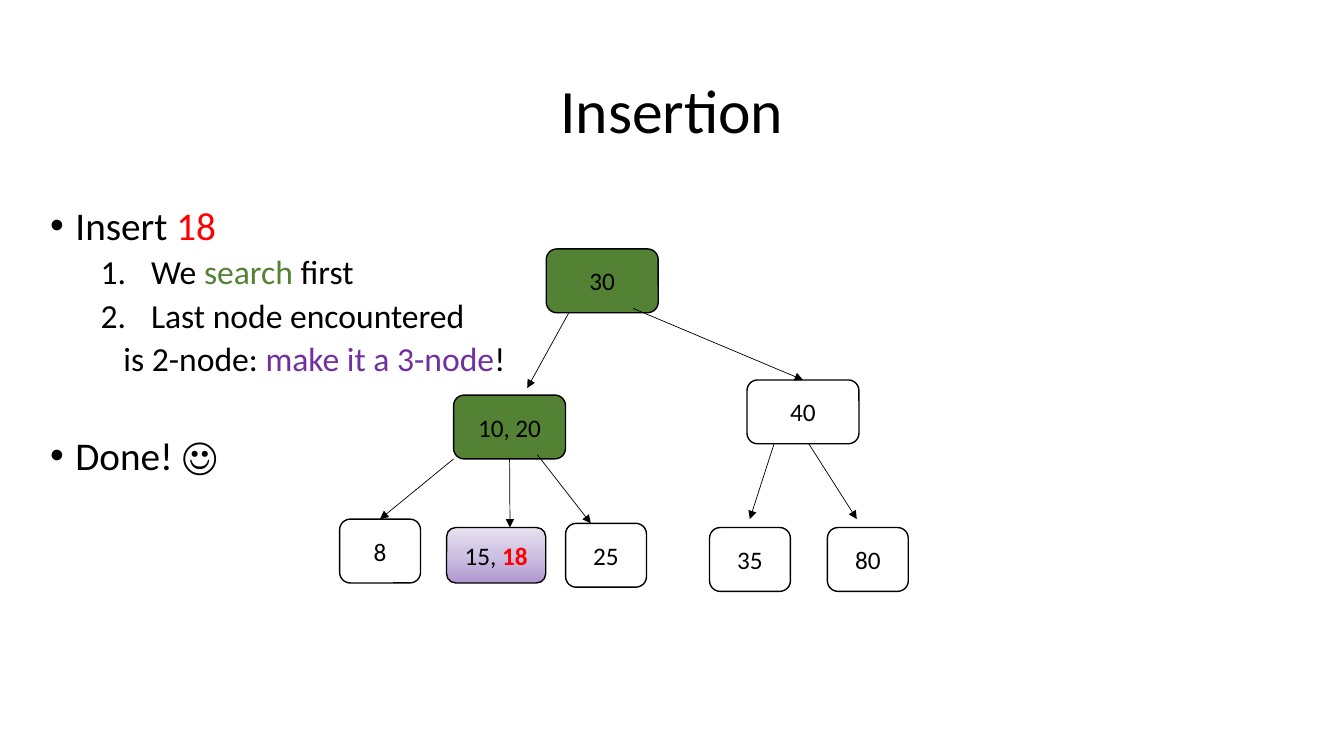
from copy import deepcopy

from lxml import etree
from pptx import Presentation
from pptx.dml.color import RGBColor
from pptx.enum.shapes import MSO_CONNECTOR as Connector, MSO_SHAPE as Shape
from pptx.enum.text import MSO_ANCHOR as Anchor, PP_ALIGN as Align
from pptx.oxml.ns import qn
from pptx.util import Pt

FONT = "Calibri"
COLOURS = {
    "black": "000000", "red": "FF0000", "green": "548235", "purple": "7030A0",
    "lilac dark": "B197D2", "lilac": "CEC1E2", "lilac light": "E7E1F0",
}
TOP, BOTTOM = 0, 2  # connection sites of a rectangle

# name: (left, top, width, height, fill, runs), relative to the tree
NODES = {
    "30": (147.6, 0, 80, 45.6, "green", [("30", "black")]),
    "40": (291, 93.6, 80, 45.6, None, [("40", "black")]),
    "10, 20": (81.4, 104.4, 80, 45.6, "green", [("10, 20", "black")]),
    "8": (0, 193, 57.8, 45.6, None, [("8", "black")]),
    "15, 18": (76.4, 199, 70.8, 39.6, "lilac", [("15, ", "black"), ("18", "red")]),
    "25": (161.4, 196, 57.8, 45.6, None, [("25", "black")]),
    "35": (264.2, 199, 57.8, 45.6, None, [("35", "black")]),
    "80": (348.4, 199, 57.8, 45.6, None, [("80", "black")]),
}
# Each end is a point in the tree, or the node it is joined to
EDGES = [
    ((163.5, 46), (134, 99.4)),
    ((209.6, 42.5), "40"),
    ((310.4, 139), (293, 193)),
    ((335, 139), (369.4, 193)),
    ((141.2, 147), (179.4, 196)),
    ("10, 20", (121.7, 199)),
    ((81.4, 150), "8"),
]
# (bullet, left margin, first-line indent, space before, size, runs)
STEPS = [
    ("•", 18, -18, 0, 28, [("Insert ", "black"), ("18", "red")]),
    ("1.", 72, -36, 5, 24, [("We ", "black"), ("search ", "green"), ("first", "black")]),
    ("1.", 72, -36, 5, 24, [("Last node encountered", "black")]),
    (None, 52.3, 0, 5, 24, [("is 2-node: ", "black"), ("make it a 3-node", "purple"),
                            ("!", "black")]),
    ("•", 18, -18, 41.4, 28, [("Done! ☺", "black")]),
]


def rgb(name):
    return RGBColor.from_string(COLOURS[name])


def add_runs(paragraph, runs, size):
    for text, colour in runs:
        run = paragraph.add_run()
        run.text = text
        run.font.name = FONT
        run.font.size = Pt(size)
        run.font.color.rgb = rgb(colour)


def set_bullet(paragraph, bullet, margin, indent):
    props = paragraph._p.get_or_add_pPr()
    props.set("marL", str(Pt(margin)))
    props.set("indent", str(Pt(indent)))
    if bullet == "•":
        etree.SubElement(props, qn("a:buFont"), typeface="Arial")
        etree.SubElement(props, qn("a:buChar"), char=bullet)
    elif bullet:
        etree.SubElement(props, qn("a:buFont"), typeface="+mj-lt")
        etree.SubElement(props, qn("a:buAutoNum"), type="arabicPeriod")


def add_text_frame(slide, left, top, width, height):
    frame = slide.shapes.add_textbox(Pt(left), Pt(top), Pt(width), Pt(height)).text_frame
    frame.word_wrap = True
    return frame


def add_title(slide, left, top, width, height):
    frame = add_text_frame(slide, left, top, width, height)
    frame.vertical_anchor = Anchor.MIDDLE
    heading = frame.paragraphs[0]
    heading.alignment = Align.CENTER
    heading.line_spacing = 0.9
    add_runs(heading, [("Insertion", "black")], 44)


def add_steps(slide, left, top, width, height):
    frame = add_text_frame(slide, left, top, width, height)
    for i, (bullet, margin, indent, before, size, runs) in enumerate(STEPS):
        step = frame.add_paragraph() if i else frame.paragraphs[0]
        set_bullet(step, bullet, margin, indent)
        step.line_spacing = 0.9
        step.space_before = Pt(before)
        add_runs(step, runs, size)


def fill_lilac(fill):
    """Shade from dark at the bottom to light at the top, in three stops."""
    fill.gradient()
    fill.gradient_angle = 90
    first = fill.gradient_stops[0]._gs
    first.addnext(deepcopy(first))
    shades = ("lilac dark", "lilac", "lilac light")
    for i, (stop, shade) in enumerate(zip(fill.gradient_stops, shades)):
        stop.position = i / 2
        stop.color.rgb = rgb(shade)


def add_node(slide, left, top, width, height, colour, runs):
    node = slide.shapes.add_shape(Shape.ROUNDED_RECTANGLE,
                                  Pt(left), Pt(top), Pt(width), Pt(height))
    node.shadow.inherit = False
    if colour == "lilac":
        fill_lilac(node.fill)
    elif colour:
        node.fill.solid()
        node.fill.fore_color.rgb = rgb(colour)
    else:
        node.fill.background()
    node.line.color.rgb = rgb("black")
    node.line.width = Pt(1)
    node.text_frame.vertical_anchor = Anchor.MIDDLE
    keys = node.text_frame.paragraphs[0]
    keys.alignment = Align.CENTER
    add_runs(keys, runs, 18)
    for run, (_, key_colour) in zip(keys.runs, runs):
        run.font.bold = key_colour == "red"
    return node


def add_edge(slide, left, top, start, end, nodes):
    points = [(0, 0) if isinstance(spot, str) else spot for spot in (start, end)]
    (x1, y1), (x2, y2) = points
    edge = slide.shapes.add_connector(Connector.STRAIGHT, Pt(left + x1), Pt(top + y1),
                                      Pt(left + x2), Pt(top + y2))
    if isinstance(start, str):
        edge.begin_connect(nodes[start], BOTTOM)
    if isinstance(end, str):
        edge.end_connect(nodes[end], TOP)
    edge.line.color.rgb = rgb("black")
    edge.line.width = Pt(0.5)
    etree.SubElement(edge.line._get_or_add_ln(), qn("a:tailEnd"), type="triangle")
    etree.SubElement(edge._element.spPr, qn("a:effectLst"))


def add_tree(slide, left, top):
    nodes = {
        name: add_node(slide, left + x, top + y, width, height, colour, runs)
        for name, (x, y, width, height, colour, runs) in NODES.items()
    }
    for start, end in EDGES:
        add_edge(slide, left, top, start, end, nodes)


def main():
    deck = Presentation()
    deck.slide_width, deck.slide_height = Pt(960), Pt(540)
    slide = deck.slides.add_slide(deck.slide_layouts[6])
    add_title(slide, 66, 28.8, 828, 104.4)
    add_steps(slide, 28.8, 144, 865.4, 342.7)
    add_tree(slide, 242.6, 177.8)
    deck.save("out.pptx")


if __name__ == "__main__":
    main()
